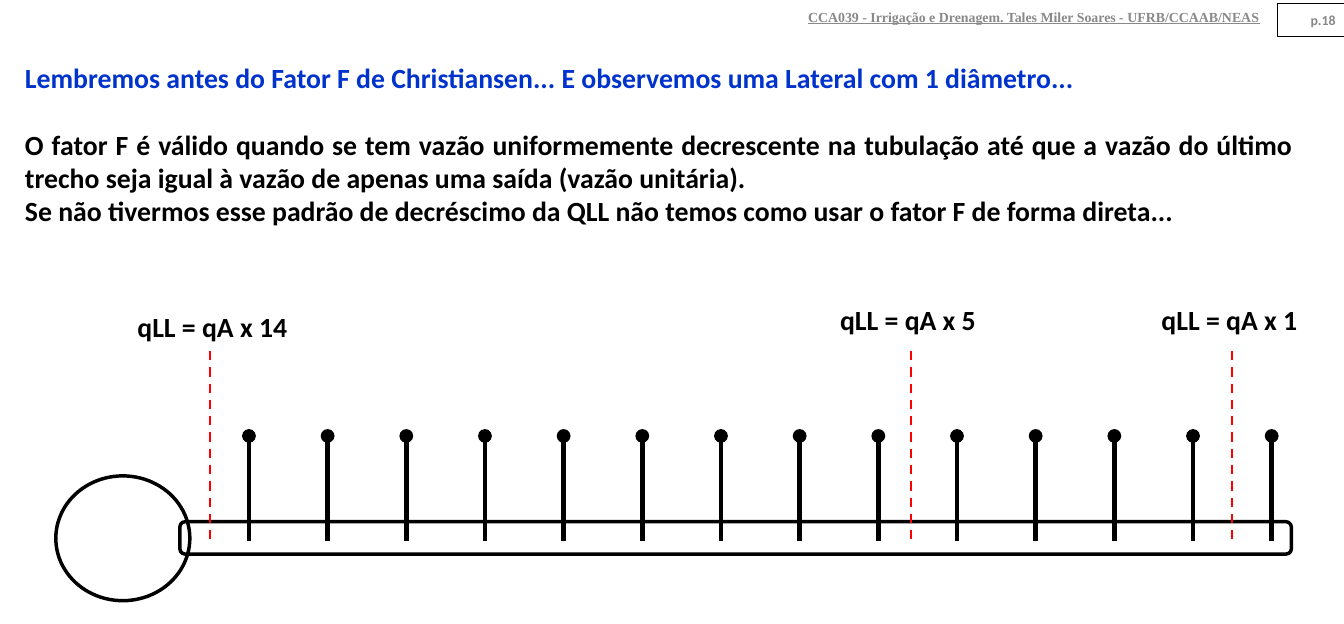
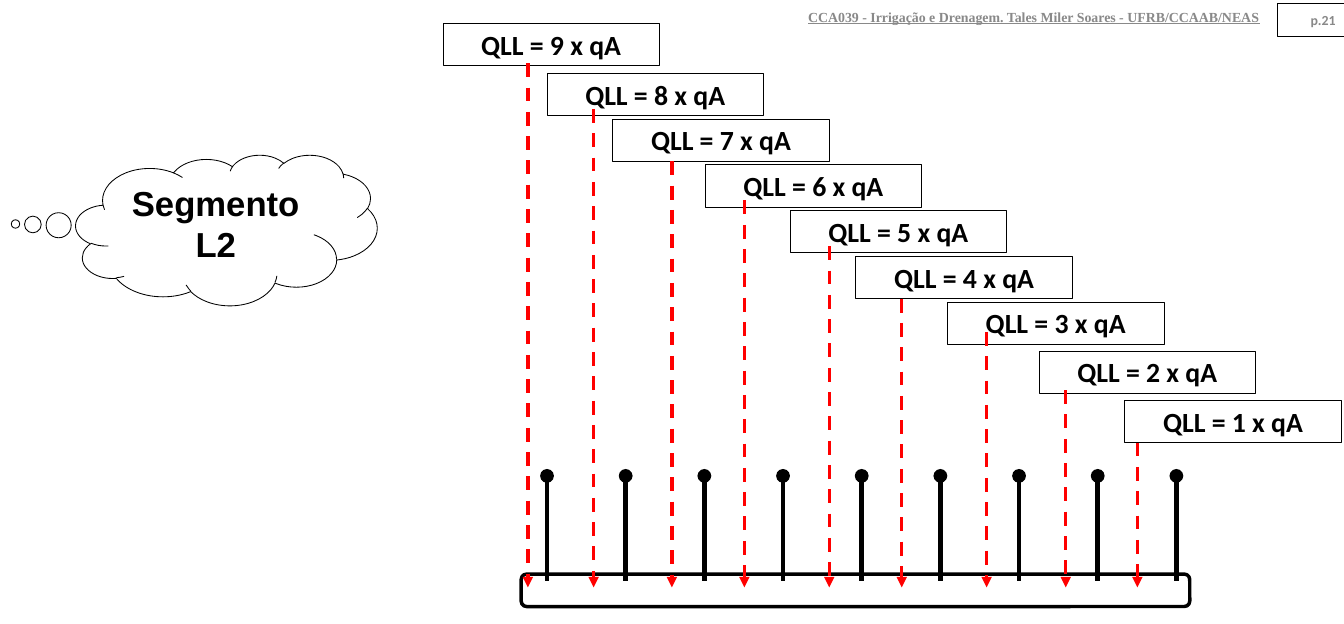
from pptx import Presentation
from pptx.dml.color import RGBColor
from pptx.enum.dml import MSO_LINE
from pptx.enum.shapes import MSO_CONNECTOR, MSO_SHAPE as Shape
from pptx.enum.text import MSO_ANCHOR as Anchor, MSO_AUTO_SIZE, PP_ALIGN as Align
from pptx.oxml.ns import qn
from pptx.util import Cm, Inches, Pt
from lxml.etree import SubElement

BLACK = RGBColor(0x00, 0x00, 0x00)
WHITE = RGBColor(0xFF, 0xFF, 0xFF)
GREY = RGBColor(0x89, 0x89, 0x89)
BLUE = RGBColor(0x00, 0x33, 0xCC)
RED = RGBColor(0xFF, 0x00, 0x00)

SLIDE_W, SLIDE_H = Cm(41), Cm(19.05)
MARGIN, TEXT_W = 0.2, 15.43
LINE_H = 0.51      # box holding one 24 pt line
OUTLET_PITCH = Cm(2.4).inches
RISER_H = 1.26
PIPE_H = 0.39

COURSE = "CCA039 - Irrigação e Drenagem. Tales Miler Soares - UFRB/CCAAB/NEAS"


def inches(*lengths):
    return [Inches(length) for length in lengths]


def write(frame, lines, align, size=24, color=BLACK, font="Calibri",
          anchor=Anchor.TOP, underline=None):
    """Fill a text frame with bold, single-spaced paragraphs."""
    frame.word_wrap = True
    frame.auto_size = MSO_AUTO_SIZE.NONE
    frame.vertical_anchor = anchor
    for index, line in enumerate(lines):
        paragraph = frame.add_paragraph() if index else frame.paragraphs[0]
        paragraph.text = line
        paragraph.alignment = align
        paragraph.line_spacing = 1.0
        paragraph.space_before = paragraph.space_after = Pt(0)
        paragraph.font.name = font
        paragraph.font.size = Pt(size)
        paragraph.font.bold = True
        paragraph.font.underline = underline
        paragraph.font.color.rgb = color


def add_outline(slide, preset, box, width=0.75, color=BLACK):
    """Add an unfilled preset shape."""
    shape = slide.shapes.add_shape(preset, *inches(*box))
    shape.shadow.inherit = False
    shape.fill.background()
    shape.line.color.rgb = color
    shape.line.width = Pt(width)
    return shape


def add_vertical(slide, x, start, end, color, width, dashed=False, tip=None):
    line = slide.shapes.add_connector(
        MSO_CONNECTOR.STRAIGHT, *inches(x, start, x, end))
    line.line.color.rgb = color
    line.line.width = Pt(width)
    if dashed:
        line.line.dash_style = MSO_LINE.DASH
    properties = line.element.spPr
    if tip:
        SubElement(properties.find(qn("a:ln")), qn("a:tailEnd"), type=tip)
    SubElement(properties, qn("a:effectLst"))


def add_header(slide, page):
    course = slide.shapes.add_textbox(*inches(7.06, 0, 8.17, 0.4))
    write(course.text_frame, [COURSE], Align.RIGHT, 12, GREY,
          "Times New Roman", Anchor.MIDDLE, underline=True)
    left = 15.34
    number = add_outline(slide, Shape.RECTANGLE,
                         (left, 0.04, SLIDE_W.inches - left, 0.4))
    write(number.text_frame, [f"p.{page}"], Align.RIGHT, 12, GREY,
          anchor=Anchor.MIDDLE)


def add_flow_label(slide, text, left, top, width, border):
    label = add_outline(slide, Shape.RECTANGLE, (left, top, width, LINE_H),
                        color=border)
    write(label.text_frame, [text], Align.CENTER)


def add_lateral(slide, left, top, width, first_outlet, outlets, foot):
    """Draw a pipe with evenly spaced risers; first_outlet and foot are
    measured from its top left corner."""
    add_outline(slide, Shape.ROUNDED_RECTANGLE, (left, top, width, PIPE_H), 3)
    for index in range(outlets):
        x = left + first_outlet + index * OUTLET_PITCH
        base = top + foot
        add_vertical(slide, x, base, base - RISER_H, BLACK, 4, tip="oval")


def place(placeholder, box):
    (placeholder.left, placeholder.top,
     placeholder.width, placeholder.height) = inches(*box)
    return placeholder.text_frame


def add_statement(slide, top, heading, paragraphs):
    """Place the heading and, one blank line below, the justified text."""
    title = place(slide.shapes.title, (MARGIN, top, TEXT_W, LINE_H))
    write(title, [heading], Align.JUSTIFY, color=BLUE)
    body = place(slide.placeholders[1], (MARGIN, top + 0.8, TEXT_W, 1.3))
    write(body, paragraphs, Align.JUSTIFY)
    for paragraph in body.paragraphs:
        properties = paragraph._p.get_or_add_pPr()
        properties.set("marL", "0")
        properties.set("indent", "0")
        SubElement(properties, qn("a:buNone"))


def build_single_diameter(prs):
    slide = prs.slides.add_slide(prs.slide_layouts[1])
    add_header(slide, 18)
    add_statement(
        slide, 0.68,
        "Lembremos antes do Fator F de Christiansen... "
        "E observemos uma Lateral com 1 diâmetro...",
        ["O fator F é válido quando se tem vazão uniformemente decrescente na "
         "tubulação até que a vazão do último trecho seja igual à vazão de "
         "apenas uma saída (vazão unitária).",
         "Se não tivermos esse padrão de decréscimo da QLL não temos como usar "
         "o fator F de forma direta..."])

    pipe_top, foot = 6.27, 0.23
    add_lateral(slide, 2.16, pipe_top, 13.35, 0.83, 14, foot)
    add_outline(slide, Shape.OVAL, (0.67, 5.72, 1.61, 1.5), 3)
    # outlets fed, label left, top and width, section line
    sections = [(14, 1.41, 3.67, 2.28, 2.52),
                (5, 9.92, 3.59, 1.97, 10.94),
                (1, 13.78, 3.59, 1.97, 14.8)]
    for fed, left, top, width, section in sections:
        add_flow_label(slide, f"qLL = qA x {fed}", left, top, width, WHITE)
        add_vertical(slide, section, 4.22, pipe_top + foot, RED, 2, dashed=True)


def build_segment(prs):
    slide = prs.slides.add_slide(prs.slide_layouts[6])
    add_header(slide, 21)
    pipe_top = 6.9
    add_lateral(slide, 6.26, pipe_top, 8.03, 0.31, 9, 0.08)
    # label left and top, arrow position and start, from 9 outlets fed to 1
    steps = [(5.32, 0.28, 6.34, 0.76), (6.57, 0.88, 7.13, 1.31),
             (7.36, 1.43, 8.07, 1.94), (8.47, 1.98, 8.94, 2.41),
             (9.49, 2.53, 9.96, 2.96), (10.28, 3.08, 10.83, 3.59),
             (11.38, 3.63, 11.85, 3.99), (12.48, 4.22, 12.8, 4.69),
             (13.51, 4.81, 13.66, 5.32)]
    for index, (left, top, arrow, start) in enumerate(steps):
        fed = len(steps) - index
        add_flow_label(slide, f"QLL = {fed} x qA", left, top, 2.6, BLACK)
        add_vertical(slide, arrow, start, pipe_top + 0.16, RED, 3,
                     dashed=True, tip="triangle")

    segment = add_outline(slide, Shape.CLOUD_CALLOUT, (0.91, 1.86, 3.62, 1.81))
    segment.adjustments[0] = -0.7
    segment.adjustments[1] = -0.04
    write(segment.text_frame, ["Segmento\vL2"], Align.CENTER, 30, font="Arial")


def main():
    prs = Presentation()
    prs.slide_width, prs.slide_height = SLIDE_W, SLIDE_H
    build_single_diameter(prs)
    build_segment(prs)
    prs.save("out.pptx")


if __name__ == "__main__":
    main()
